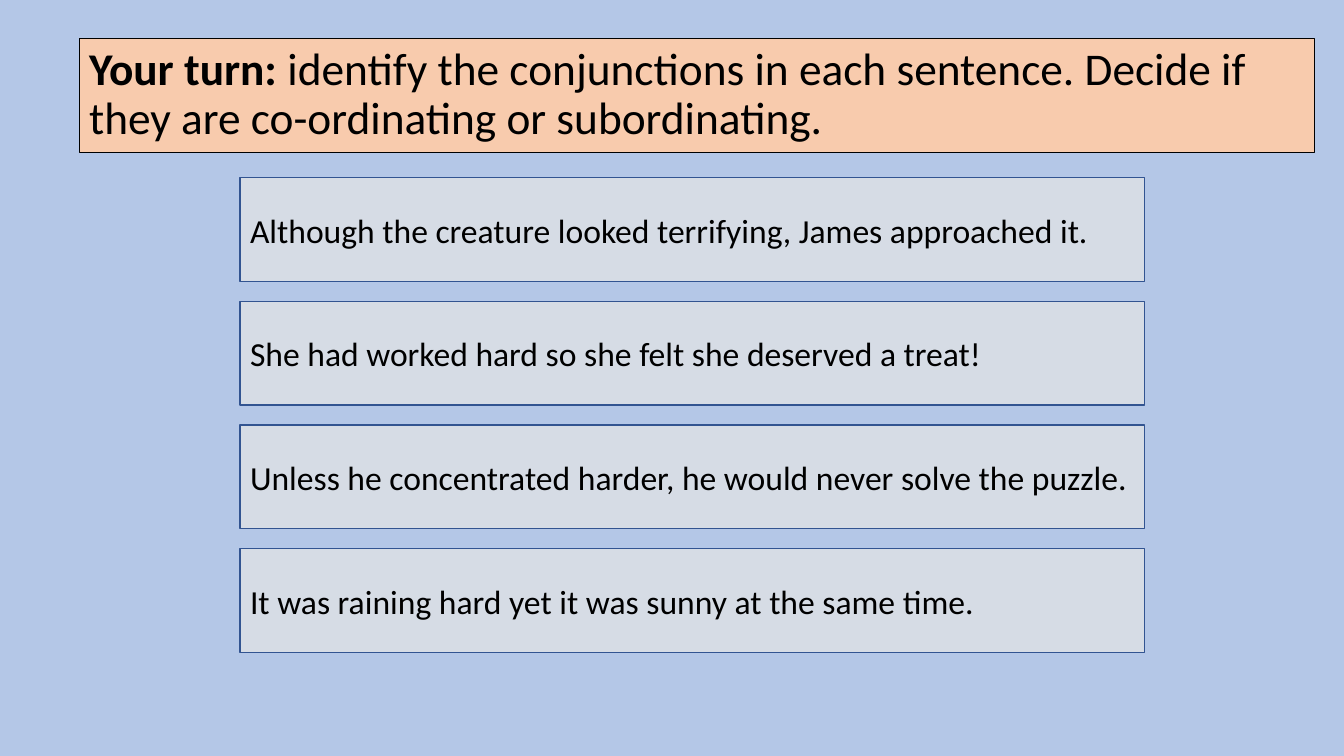
from dataclasses import dataclass
from pptx import Presentation
from pptx.dml.color import RGBColor as Rgb
from pptx.enum.shapes import MSO_SHAPE as Shape
from pptx.enum.text import MSO_ANCHOR as Anchor, MSO_AUTO_SIZE as Fit, PP_ALIGN as Align
from pptx.util import Pt


@dataclass(frozen=True)
class Theme:
    face: str = "Calibri"
    back: str = "B4C7E7"
    ink: str = "000000"
    peach: str = "F8CBAD"
    grey: str = "D6DCE5"
    edge: str = "325491"
    head: float = 32.4
    body: float = 24


THEME = Theme()
TASK = [
    ("Your turn:", True),
    (" identify the conjunctions in each sentence. "
     "Decide if they are co-ordinating or subordinating.", False),
]
LINES = [
    "Although the creature looked terrifying, James approached it.",
    "She had worked hard so she felt she deserved a treat!",
    "Unless he concentrated harder, he would never solve the puzzle.",
    "It was raining hard yet it was sunny at the same time.",
]


def assign(item, values):
    for name, value in values.items():
        setattr(item, name, value)


def paint(shape, fill, edge, width):
    shape.fill.solid()
    shape.fill.fore_color.rgb = Rgb.from_string(fill)
    shape.line.color.rgb = Rgb.from_string(edge)
    shape.line.width = Pt(width)


def write(shape, runs, size, spacing):
    """Fill the shape with one left-aligned paragraph of (text, bold) runs."""
    frame = shape.text_frame
    assign(frame, dict(word_wrap=True, auto_size=Fit.NONE, vertical_anchor=Anchor.MIDDLE))
    para = frame.paragraphs[0]
    assign(para, dict(alignment=Align.LEFT, line_spacing=spacing))
    for text, bold in runs:
        run = para.add_run()
        run.text = text
        assign(run.font, dict(name=THEME.face, size=Pt(size), bold=bold))
        run.font.color.rgb = Rgb.from_string(THEME.ink)


def banner(slide, left, top, width, height):
    title = slide.shapes.title
    assign(title, dict(left=Pt(left), top=Pt(top), width=Pt(width), height=Pt(height)))
    paint(title, THEME.peach, THEME.ink, 0.75)
    write(title, TASK, THEME.head, 0.9)


def stack(slide, left, top, width, height):
    """Spread the sentence cards evenly down the given box."""
    tall = 74
    step = (height - tall) / (len(LINES) - 1)
    for i, line in enumerate(LINES):
        card = slide.shapes.add_shape(
            Shape.RECTANGLE, Pt(left), Pt(top + i * step), Pt(width), Pt(tall))
        card.shadow.inherit = False
        paint(card, THEME.grey, THEME.edge, 1)
        write(card, [(line, False)], THEME.body, 1.0)


def main():
    deck = Presentation()
    assign(deck, dict(slide_width=Pt(960), slide_height=Pt(540)))
    slide = deck.slides.add_slide(deck.slide_layouts.get_by_name("Title Only"))
    fill = slide.background.fill
    fill.solid()
    fill.fore_color.rgb = Rgb.from_string(THEME.back)
    banner(slide, 56.5, 27.5, 882.5, 81.5)
    stack(slide, 171.5, 127, 646, 339)
    deck.save("out.pptx")


if __name__ == "__main__":
    main()
